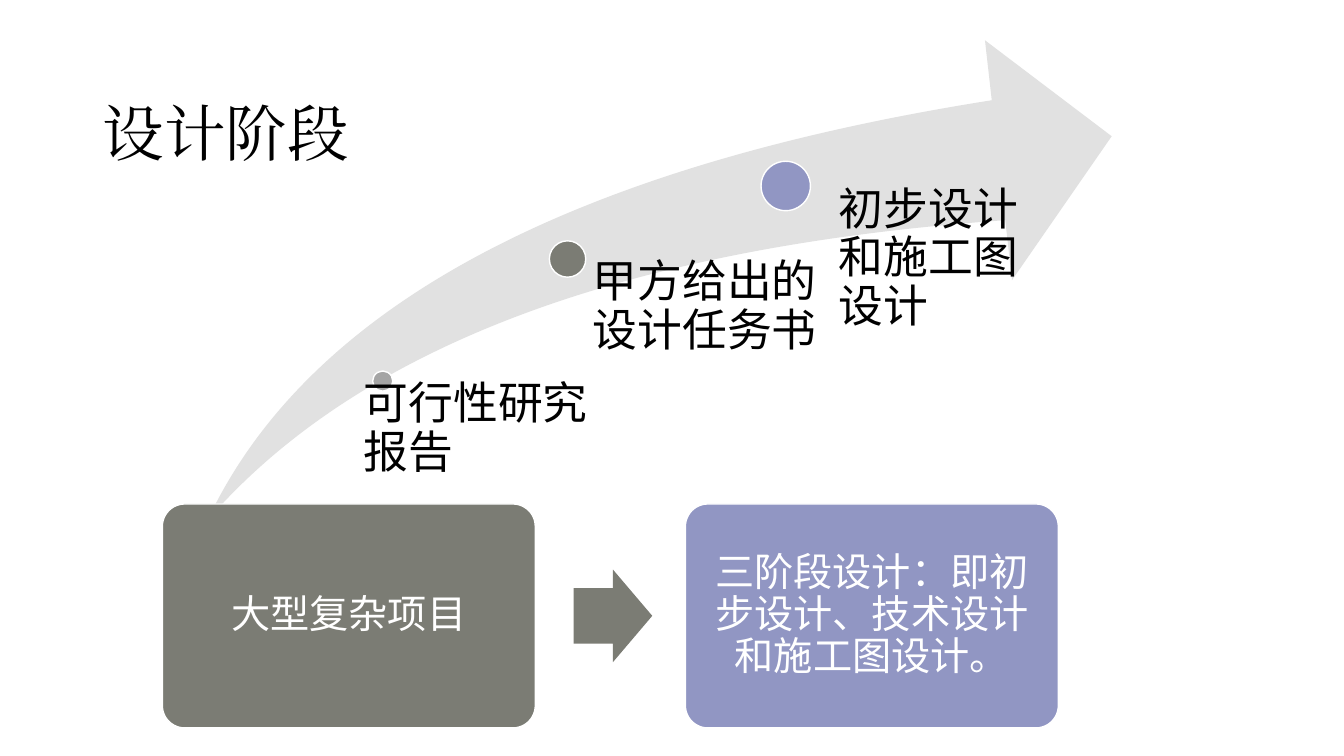
import pptx
import pptx.util
import pptx.dml.color
import pptx.enum.shapes
import pptx.enum.text
import pptx.oxml.ns

Pt = pptx.util.Pt
KIND = pptx.enum.shapes.MSO_SHAPE
ALIGN = pptx.enum.text.PP_ALIGN
ANCHOR = pptx.enum.text.MSO_ANCHOR
SANS = "Noto Sans CJK SC"
GRAY, OLIVE, BLUE, WHITE, BLACK = "A5A5A5", "7B7C74", "9196C3", "FFFFFF", "000000"


def tint(code):
    return pptx.dml.color.RGBColor.from_string(code)


class Page:
    """Draws styled elements on one slide, with all lengths in points."""

    def __init__(self, deck):
        self.slide = deck.slides.add_slide(deck.slide_layouts[5])
        self.shapes = self.slide.shapes

    def letter(self, shape, text, size, color, font=SANS, align=ALIGN.LEFT,
               anchor=ANCHOR.TOP, lead=0.9, pads=None):
        frame = shape.text_frame
        frame.text = text
        frame.word_wrap = True
        frame.auto_size = pptx.enum.text.MSO_AUTO_SIZE.NONE
        frame.vertical_anchor = anchor
        if pads:
            (frame.margin_left, frame.margin_top,
             frame.margin_right, frame.margin_bottom) = map(Pt, pads)
        para = frame.paragraphs[0]
        para.alignment = align
        para.line_spacing = lead
        for run in para.runs:
            run.font.size = Pt(size)
            run.font.name = font
            run.font.color.rgb = tint(color)
            props = run._r.get_or_add_rPr()
            east = props.makeelement(pptx.oxml.ns.qn("a:ea"), {"typeface": font})
            props.find(pptx.oxml.ns.qn("a:latin")).addnext(east)

    def title(self, text, *box):
        head = self.shapes.title
        head.left, head.top, head.width, head.height = map(Pt, box)
        self.letter(head, text, 44, BLACK, "Times New Roman", anchor=ANCHOR.MIDDLE, lead=1.5)

    def shape(self, kind, fill, box, line=None, adjust=()):
        item = self.shapes.add_shape(kind, *map(Pt, box))
        item.shadow.inherit = False
        item.fill.solid()
        item.fill.fore_color.rgb = tint(fill)
        if line:
            item.line.color.rgb = tint(line)
            item.line.width = Pt(1)
        else:
            item.line.fill.background()
        for index, value in enumerate(adjust):
            item.adjustments[index] = value
        return item

    def dot(self, fill, left, top, size):
        self.shape(KIND.OVAL, fill, (left, top, size, size), WHITE)

    def label(self, text, left, top, width, inset):
        box = self.shapes.add_textbox(*map(Pt, (left, top, width, 371.5 - top)))
        self.letter(box, text, 32, BLACK, pads=(inset, 0, 0, 0))

    def card(self, text, fill, left):
        box = self.shape(KIND.ROUNDED_RECTANGLE, fill, (left, 360, 266.4, 160), WHITE, [0.1])
        self.letter(box, text, 28, WHITE, align=ALIGN.CENTER, anchor=ANCHOR.MIDDLE,
                    pads=[6.5] * 4)


def main():
    deck = pptx.Presentation()
    deck.slide_width, deck.slide_height = Pt(960), Pt(540)
    page = Page(deck)
    page.title("设计阶段", 66, 28.8, 828, 104.4)
    page.shape(KIND.SWOOSH_ARROW, "E1E1E1", (148.3, 28.8, 645.8, 342.7), adjust=[0.25, 0.25])

    steps = [
        ("可行性研究报告", GRAY, (266.2, 265, 14.4), (252.7, 272.2, 169.2, 7.2)),
        ("甲方给出的设计任务书", OLIVE, (392.4, 172, 26), (409.7, 185, 198, 13.7)),
        ("初步设计和施工图设计", BLUE, (543.6, 115.2, 35.3), (580.3, 133.2, 169.2, 18.7)),
    ]
    for text, fill, spot, place in steps:
        page.dot(fill, *spot)
        page.label(text, *place)

    page.card("大型复杂项目", OLIVE, 116)
    page.shape(KIND.RIGHT_ARROW, OLIVE, (409.7, 406.8, 56.2, 66.2), adjust=[0.6, 0.5])
    page.card("三阶段设计：即初步设计、技术设计和施工图设计。", BLUE, 489.6)
    deck.save("out.pptx")


if __name__ == "__main__":
    main()
